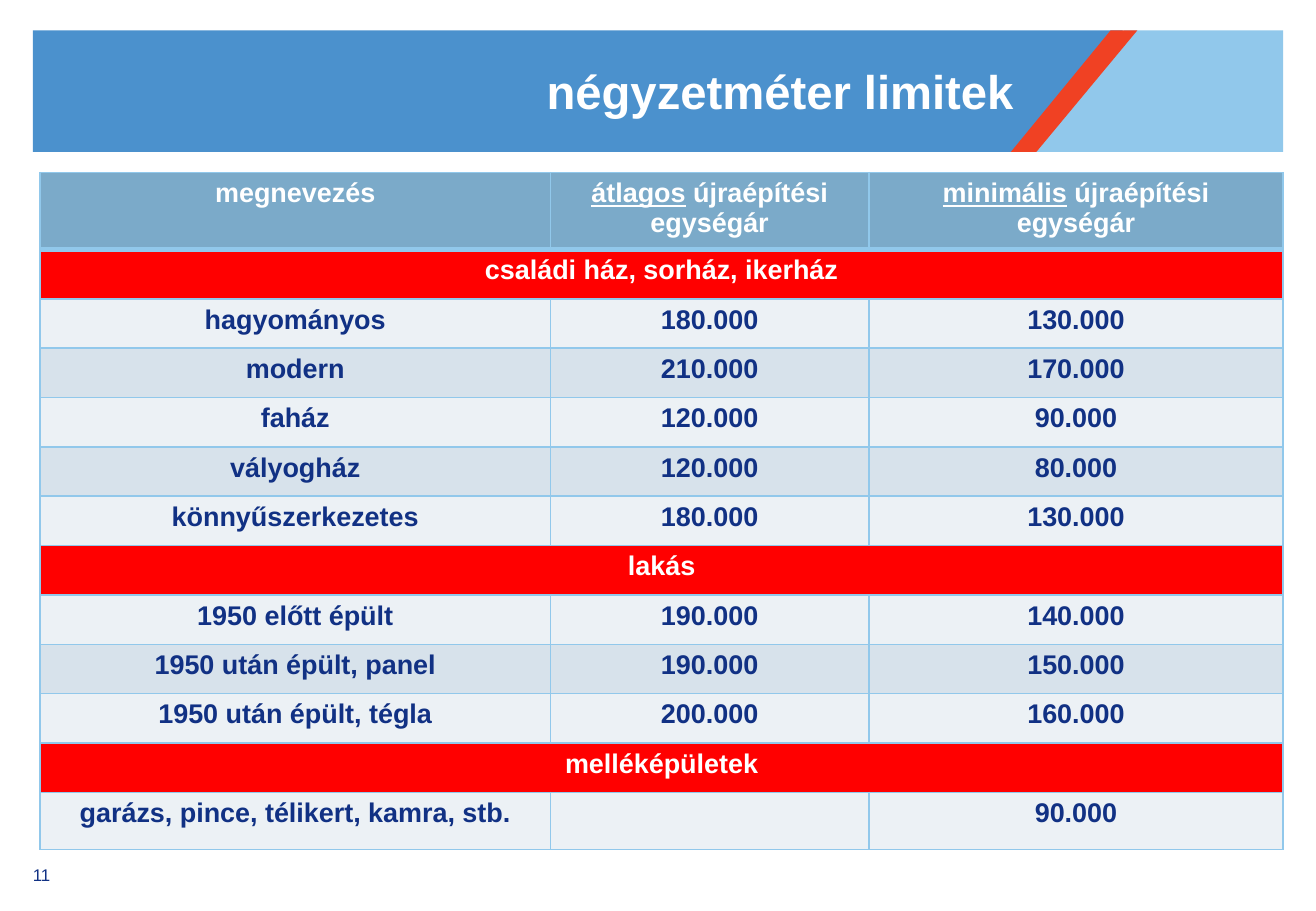
from lxml import etree
from pptx import Presentation
from pptx.dml.color import RGBColor
from pptx.enum import text
from pptx.oxml import ns
from pptx.util import Inches, Pt

WHITE = RGBColor(0xFF, 0xFF, 0xFF)
NAVY = RGBColor(0x11, 0x31, 0x84)
BAND_BLUE = RGBColor(0x4B, 0x91, 0xCD)
LIGHT_BLUE = RGBColor(0x91, 0xC8, 0xEB)
ORANGE = RGBColor(0xF0, 0x41, 0x23)
HEADER_BLUE = RGBColor(0x7B, 0xAA, 0xC9)
SECTION_RED = RGBColor(0xFF, 0x00, 0x00)
STRIPES = (RGBColor(0xEC, 0xF1, 0xF5), RGBColor(0xD7, 0xE2, 0xEB))

BAND_TOP, BAND_BOTTOM = 0.25, 1.25
COLUMN_WIDTHS = (4.2, 2.62, 3.41)
HEADER_HEIGHT, LAST_HEIGHT, TABLE_HEIGHT = 0.59, 0.47, 5.53

PRICE_HEADERS = ("átlagos", "minimális")
SECTIONS = (
    ("családi ház, sorház, ikerház", (
        ("hagyományos", "180.000", "130.000"),
        ("modern", "210.000", "170.000"),
        ("faház", "120.000", "90.000"),
        ("vályogház", "120.000", "80.000"),
        ("könnyűszerkezetes", "180.000", "130.000"),
    )),
    ("lakás", (
        ("1950 előtt épült", "190.000", "140.000"),
        ("1950 után épült, panel", "190.000", "150.000"),
        ("1950 után épült, tégla", "200.000", "160.000"),
    )),
    ("melléképületek", (
        ("garázs, pince, télikert, kamra, stb.", "", "90.000"),
    )),
)


def add_band_part(slide, top_left, top_right, bottom_right, bottom_left, color):
    """Draw one slanted part of the title band from its four x positions."""
    corners = [(Inches(x), Inches(y)) for x, y in (
        (top_left, BAND_TOP), (top_right, BAND_TOP),
        (bottom_right, BAND_BOTTOM), (bottom_left, BAND_BOTTOM))]
    builder = slide.shapes.build_freeform(*corners[0], scale=1.0)
    builder.add_line_segments(corners[1:], close=True)
    part = builder.convert_to_shape()
    part.shadow.inherit = False
    part.fill.solid()
    part.fill.fore_color.rgb = color
    part.line.fill.background()


def add_run(paragraph, words, size, color, bold=True, underline=None):
    run = paragraph.add_run()
    run.text = words
    run.font.name = "Arial"
    run.font.size = Pt(size)
    run.font.bold = bold
    run.font.underline = underline
    run.font.color.rgb = color


def add_label(slide, left, top, width, height, words, size, color, bold,
              align, anchor):
    frame = slide.shapes.add_textbox(
        Inches(left), Inches(top), Inches(width), Inches(height)).text_frame
    frame.margin_left = frame.margin_right = 0
    frame.margin_top = frame.margin_bottom = 0
    frame.word_wrap = True
    frame.vertical_anchor = anchor
    frame.paragraphs[0].alignment = align
    add_run(frame.paragraphs[0], words, size, color, bold)


def set_borders(cell, top=1, bottom=1):
    """Give a cell light blue borders; widths are in points."""
    properties = cell._tc.get_or_add_tcPr()
    for side, width in (("L", 1), ("R", 1), ("T", top), ("B", bottom)):
        line = etree.SubElement(properties, ns.qn(f"a:ln{side}"), w=str(Pt(width)))
        fill = etree.SubElement(line, ns.qn("a:solidFill"))
        etree.SubElement(fill, ns.qn("a:srgbClr"), val=str(LIGHT_BLUE))


def fill_cell(cell, runs, fill, color):
    """Write (words, underline) runs centred on a filled cell."""
    cell.fill.solid()
    cell.fill.fore_color.rgb = fill
    paragraph = cell.text_frame.paragraphs[0]
    paragraph.alignment = text.PP_ALIGN.CENTER
    for words, underline in runs:
        add_run(paragraph, words, 16, color, underline=underline)


def add_price_table(slide):
    row_count = 1 + sum(1 + len(prices) for _, prices in SECTIONS)
    table = slide.shapes.add_table(
        row_count, len(COLUMN_WIDTHS), Inches(0.33), Inches(1.42),
        Inches(sum(COLUMN_WIDTHS)), Inches(TABLE_HEIGHT)).table
    for column, width in zip(table.columns, COLUMN_WIDTHS):
        column.width = Inches(width)
    body_height = (TABLE_HEIGHT - HEADER_HEIGHT - LAST_HEIGHT) / (row_count - 2)
    heights = [HEADER_HEIGHT] + [body_height] * (row_count - 2) + [LAST_HEIGHT]
    for index, (row, height) in enumerate(zip(table.rows, heights)):
        row.height = Inches(height)
        for cell in row.cells:
            set_borders(cell, top=3 if index == 1 else 1,
                        bottom=3 if index == 0 else 1)

    headers = [[("megnevezés", None)]] + [
        [(kind, True), (" újraépítési egységár", None)] for kind in PRICE_HEADERS]
    for column, runs in enumerate(headers):
        fill_cell(table.cell(0, column), runs, HEADER_BLUE, WHITE)

    row = 1
    for section, prices in SECTIONS:
        heading = table.cell(row, 0)
        heading.merge(table.cell(row, len(COLUMN_WIDTHS) - 1))
        fill_cell(heading, [(section, None)], SECTION_RED, WHITE)
        for offset, values in enumerate(prices):
            for column, value in enumerate(values):
                fill_cell(table.cell(row + 1 + offset, column),
                          [(value, None)] if value else [],
                          STRIPES[offset % 2], NAVY)
        row += 1 + len(prices)


def main():
    deck = Presentation()
    deck.slide_width, deck.slide_height = Inches(10.83), Inches(7.5)
    slide = deck.slides.add_slide(deck.slide_layouts[6])
    slide.background.fill.solid()
    slide.background.fill.fore_color.rgb = WHITE

    add_band_part(slide, 0.27, 9.24, 8.44, 0.27, BAND_BLUE)
    add_band_part(slide, 9.25, 10.56, 10.56, 8.44, LIGHT_BLUE)
    add_band_part(slide, 9.14, 9.36, 8.53, 8.32, ORANGE)
    add_label(slide, 0.63, BAND_TOP, 7.71, BAND_BOTTOM - BAND_TOP,
              "négyzetméter limitek", 28, WHITE, True,
              text.PP_ALIGN.RIGHT, text.MSO_ANCHOR.MIDDLE)
    add_price_table(slide)
    add_label(slide, 0.27, 7.12, 0.36, 0.33, "11", 10, NAVY, False,
              text.PP_ALIGN.LEFT, text.MSO_ANCHOR.TOP)
    deck.save("out.pptx")


if __name__ == "__main__":
    main()
